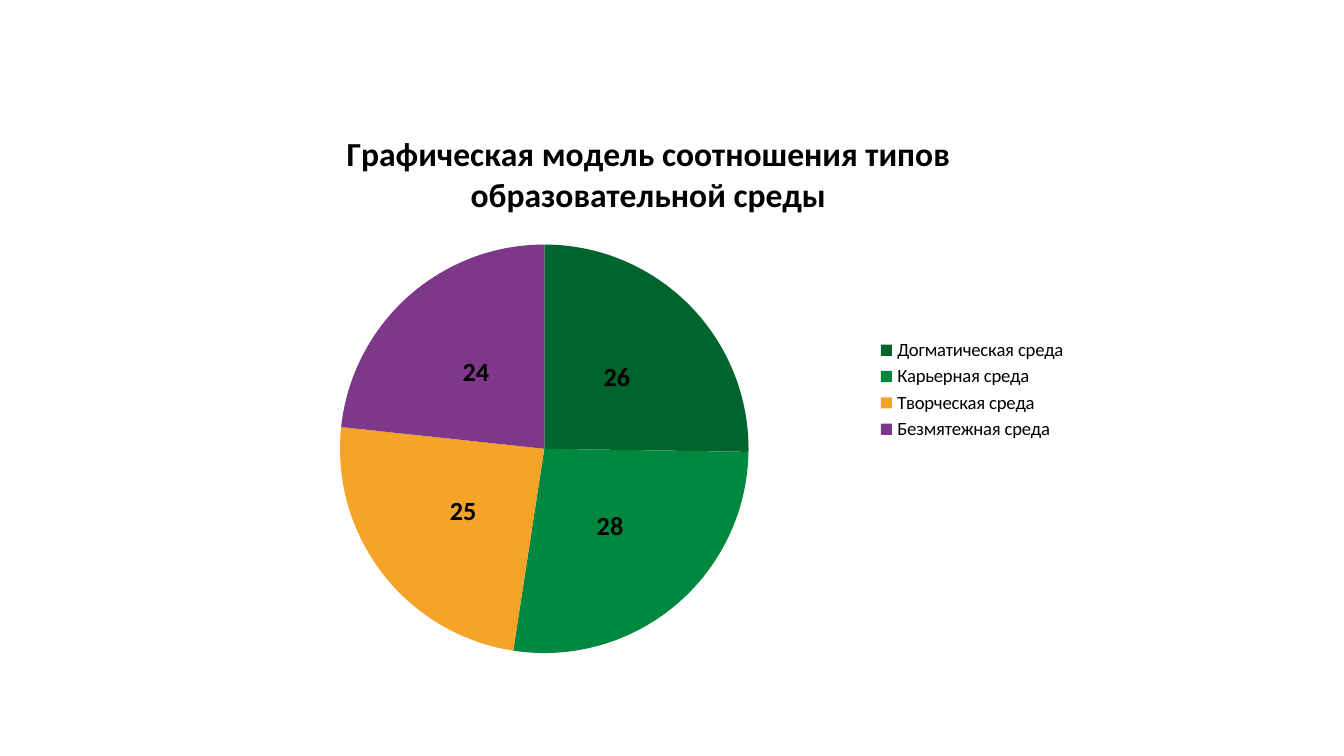
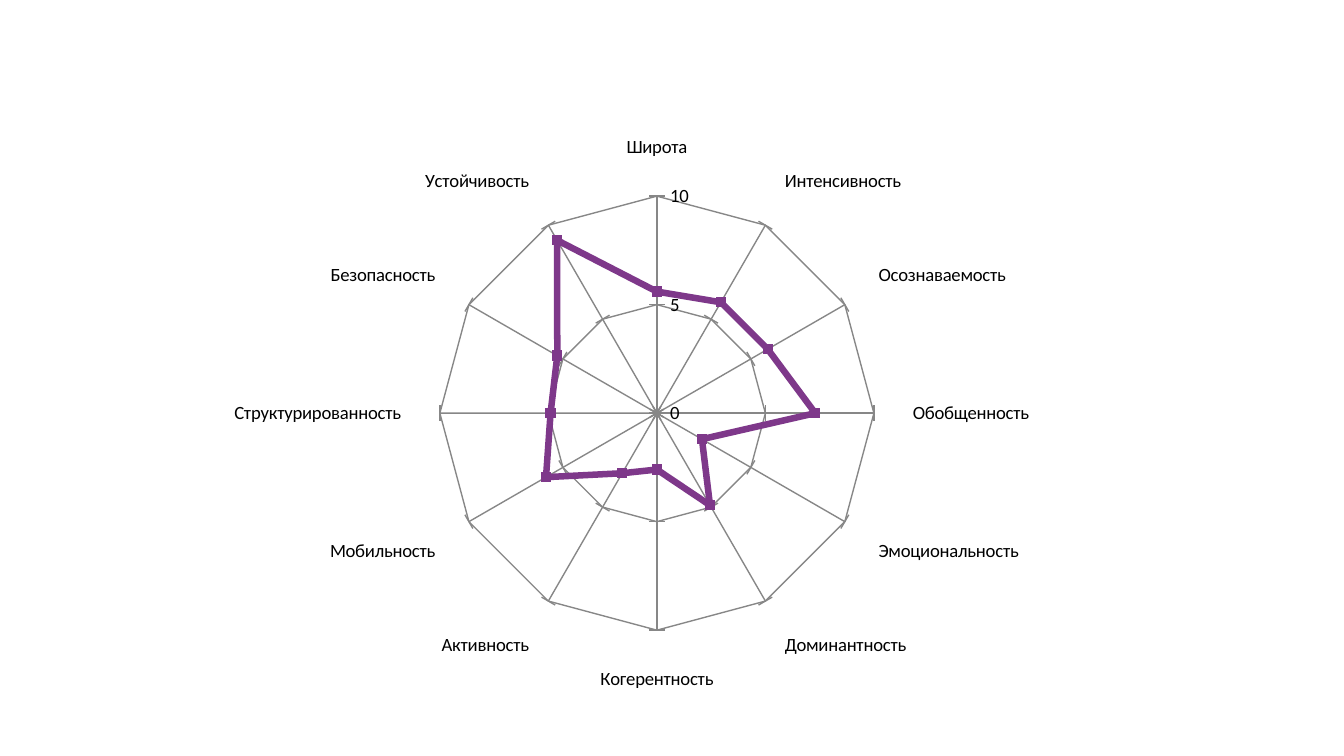
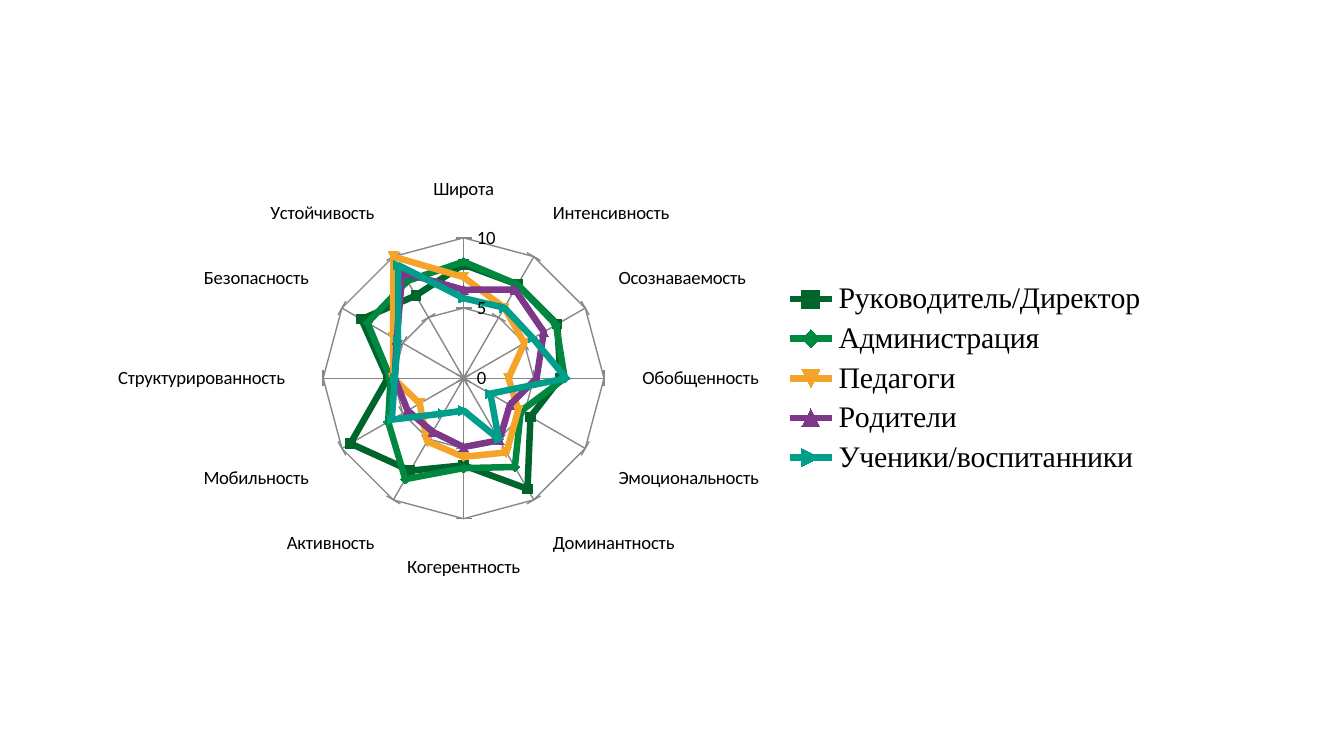
from lxml import etree
from pptx import Presentation
from pptx.chart.data import CategoryChartData
from pptx.dml.color import RGBColor
from pptx.enum.chart import (XL_CHART_TYPE, XL_LABEL_POSITION, XL_LEGEND_POSITION,
                             XL_TICK_MARK)
from pptx.oxml.ns import qn
from pptx.util import Inches, Pt

COLORS = {"text": "000000", "grid": "878787", "dark_green": "00642D",
          "green": "008841", "orange": "F6A429", "purple": "7E388A",
          "teal": "019E8B"}
FONT = "Calibri"
LEGEND_FONT = "Times New Roman"

PIE_TITLE = "Графическая модель соотношения типов образовательной среды"
ENVIRONMENTS = [
    ("Догматическая среда", 26, "dark_green"),
    ("Карьерная среда", 28, "green"),
    ("Творческая среда", 25, "orange"),
    ("Безмятежная среда", 24, "purple"),
]

PARAMETERS = ["Широта", "Интенсивность", "Осознаваемость", "Обобщенность",
              "Эмоциональность", "Доминантность", "Когерентность", "Активность",
              "Мобильность", "Структурированность", "Безопасность", "Устойчивость"]
SINGLE_PROFILE = [
    ("Series 1", [5.6, 5.9, 5.9, 7.3, 2.4, 4.9, 2.6, 3.2, 5.9, 4.9, 5.3, 9.2], "purple"),
]
GROUP_PROFILES = [
    ("Руководитель/Директор",
     [8.1, 7.7, 7.7, 6.9, 5.5, 9.1, 6.2, 7.6, 9.3, 5.4, 8.4, 6.8], "dark_green"),
    ("Администрация",
     [8.3, 7.7, 7.6, 7.2, 4.7, 7.3, 6.4, 8.3, 6.2, 5.2, 7.9, 8], "green"),
    ("Педагоги",
     [7.2, 5.8, 5, 3.2, 4.5, 6.1, 5.6, 5.2, 3.6, 5, 5.8, 10], "orange"),
    ("Родители",
     [6.3, 7.3, 6.6, 5.2, 3.8, 5.1, 4.9, 4.4, 4.6, 4.9, 5.5, 8.7], "purple"),
    ("Ученики/воспитанники",
     [5.7, 5.8, 5.7, 7.3, 2.2, 5, 2.3, 2.9, 5.9, 4.9, 5.4, 9.3], "teal"),
]

# Chart frames: left, top, width, height
PIE_FRAME = (1.61, 0.79, 6.43, 4.22)
SINGLE_FRAME = (1.62, 0.81, 6.16, 4.53)
GROUP_FRAME = (0.72, 0.58, 7.92, 4.47)
PIE_CIRCLE = (4.05, 3.34, 1.52)  # centre x, centre y, radius


def rgb(name):
    return RGBColor.from_string(COLORS[name])


def style_font(font, size, face=FONT, bold=False):
    font.size, font.name, font.bold = Pt(size), face, bold
    font.color.rgb = rgb("text")


def place_plot(chart, frame, circle):
    """Fix the inner plot area to the square around the circle."""
    left, top, width, height = frame
    cx, cy, radius = circle
    plot_area = chart._chartSpace.chart.plotArea
    for old in plot_area.findall(qn("c:layout")):
        plot_area.remove(old)
    layout = etree.Element(qn("c:layout"))
    manual = etree.SubElement(layout, qn("c:manualLayout"))
    values = [("layoutTarget", "inner"), ("xMode", "edge"), ("yMode", "edge"),
              ("x", (cx - radius - left) / width), ("y", (cy - radius - top) / height),
              ("w", 2 * radius / width), ("h", 2 * radius / height)]
    for tag, value in values:
        etree.SubElement(manual, qn("c:" + tag)).set("val", str(value))
    plot_area.insert(0, layout)


def add_chart_slide(prs, kind, categories, series, frame):
    data = CategoryChartData()
    data.categories = categories
    for name, values in series:
        data.add_series(name, values)
    s = prs.slides.add_slide(prs.slide_layouts[6])
    chart = s.shapes.add_chart(kind, *map(Inches, frame), data).chart
    style_font(chart.font, 10)
    chart.has_title = chart.has_legend = False
    return chart


def add_legend(chart):
    chart.has_legend = True
    chart.legend.position = XL_LEGEND_POSITION.RIGHT
    chart.legend.include_in_layout = False
    return chart.legend


def add_pie(prs):
    names, values, colors = zip(*ENVIRONMENTS)
    chart = add_chart_slide(prs, XL_CHART_TYPE.PIE, names, [(PIE_TITLE, values)], PIE_FRAME)
    place_plot(chart, PIE_FRAME, PIE_CIRCLE)
    tf = chart.chart_title.text_frame
    tf.text = PIE_TITLE
    style_font(tf.paragraphs[0].runs[0].font, 18, bold=True)
    add_legend(chart)
    plot = chart.plots[0]
    plot.vary_by_categories = True
    for i, color in enumerate(colors):
        fill = plot.series[0].points[i].format.fill
        fill.solid()
        fill.fore_color.rgb = rgb(color)
    labels = plot.series[0].data_labels
    labels.show_value = True
    labels.position = XL_LABEL_POSITION.CENTER
    labels.number_format, labels.number_format_is_linked = "0", False
    style_font(labels.font, 14, bold=True)


def add_radar(prs, profiles, frame):
    chart = add_chart_slide(prs, XL_CHART_TYPE.RADAR_MARKERS, PARAMETERS,
                            [profile[:2] for profile in profiles], frame)
    chart.plots[0].vary_by_categories = False
    for series, (_, _, color) in zip(chart.plots[0].series, profiles):
        series.smooth = False
        series.format.line.width = Pt(3.5)
        series.format.line.color.rgb = rgb(color)
        series.marker.size = 5
        series.marker.format.fill.solid()
        series.marker.format.fill.fore_color.rgb = rgb(color)
        series.marker.format.line.color.rgb = rgb(color)
    value_axis = chart.value_axis
    value_axis.minimum_scale, value_axis.maximum_scale = 0, 10
    value_axis.major_unit = 5
    value_axis.major_tick_mark = XL_TICK_MARK.CROSS
    chart.category_axis.major_tick_mark = XL_TICK_MARK.OUTSIDE
    for axis in (chart.category_axis, value_axis):
        axis.minor_tick_mark = XL_TICK_MARK.NONE
        axis.has_major_gridlines = True
        for line in (axis.format.line, axis.major_gridlines.format.line):
            line.width = Pt(0)
            line.color.rgb = rgb("grid")
    return chart


def main():
    prs = Presentation()
    prs.slide_width = Inches(10)
    prs.slide_height = prs.slide_width * 9 // 16
    add_pie(prs)
    add_radar(prs, SINGLE_PROFILE, SINGLE_FRAME)
    groups = add_radar(prs, GROUP_PROFILES, GROUP_FRAME)
    style_font(add_legend(groups).font, 16, LEGEND_FONT)
    prs.save("out.pptx")


if __name__ == "__main__":
    main()
